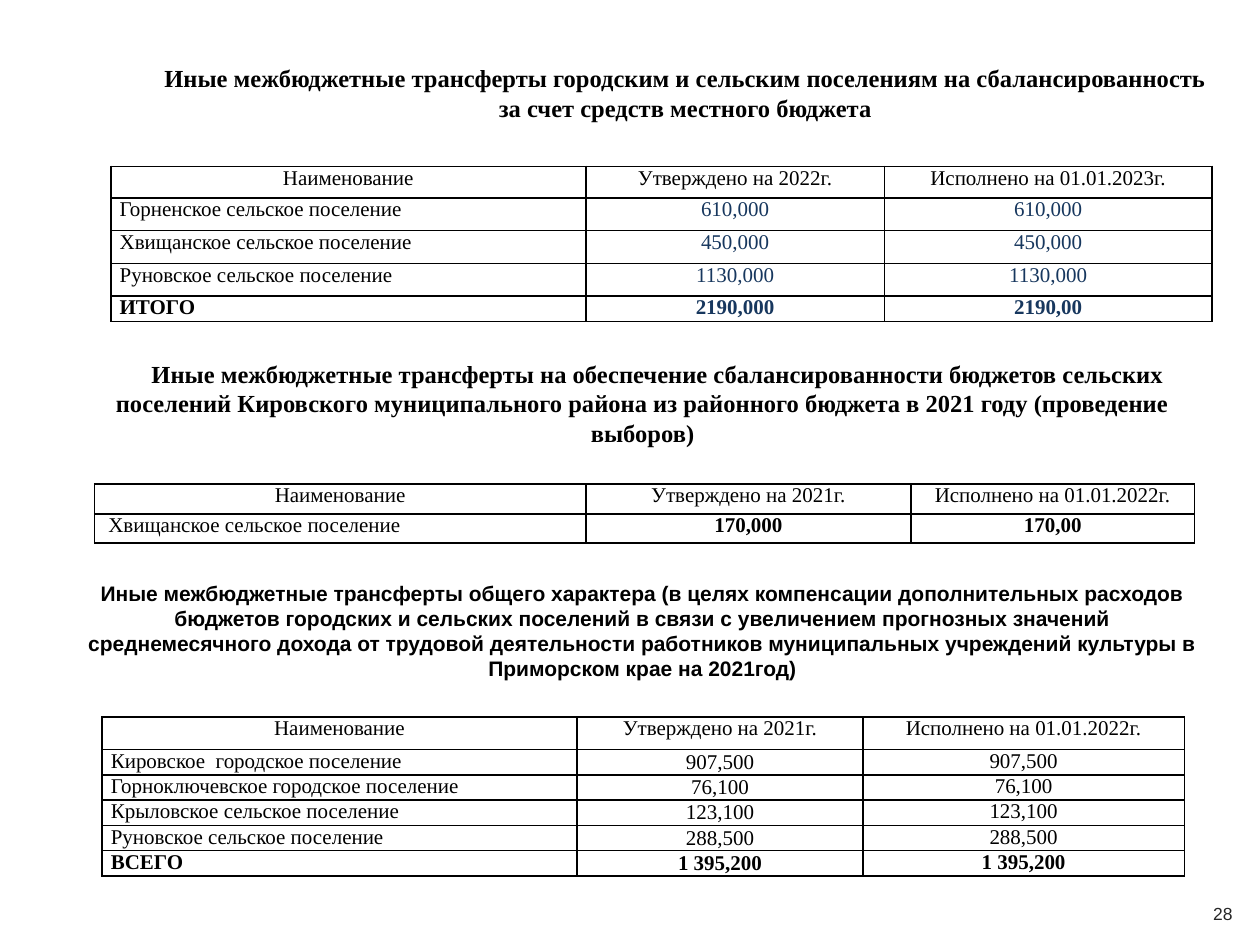
from collections import namedtuple
from lxml.etree import SubElement
from pptx import Presentation
from pptx.dml.color import RGBColor as Rgb
from pptx.enum.text import MSO_ANCHOR as Anchor, MSO_AUTO_SIZE as AutoSize, PP_ALIGN as Align
from pptx.oxml import parse_xml
from pptx.oxml.ns import nsdecls
from pptx.util import Inches, Pt

Theme = namedtuple("Theme", "serif sans black navy gray heading body number border")
theme = Theme("Times New Roman", "Arial", "000000", "17375E", "262626", 14, 12, 10, 1)

deck = Presentation()
deck.slide_width, deck.slide_height = Inches(10), Inches(7.5)
COL, ROW = deck.slide_width / 100, deck.slide_height / 75
slide = deck.slides.add_slide(deck.slide_layouts[5])


def grid(left, top, width, height):
    return round(left * COL), round(top * ROW), round(width * COL), round(height * ROW)


def write(frame, text, size, font=theme.serif, color=theme.black, bold=False, align=Align.CENTER):
    paragraph = frame.paragraphs[0]
    paragraph.alignment = align
    run = paragraph.add_run()
    run.text = text
    run.font.name, run.font.size, run.font.bold = font, Pt(size), bold
    run.font.color.rgb = Rgb.from_string(color)
    return paragraph


heading = slide.shapes.title
heading.left, heading.top, heading.width, heading.height = grid(11.3, 3.7, 86.2, 7.3)
heading.text_frame.auto_size = AutoSize.NONE
heading.text_frame.vertical_anchor = Anchor.MIDDLE
write(heading.text_frame, "Иные межбюджетные трансферты городским и сельским поселениям "
      "на сбалансированность за счет средств местного бюджета", theme.heading, bold=True)

captions = [
    (grid(4.5, 28, 93, 8.1), Anchor.TOP, 2.4,
     "Иные межбюджетные трансферты на обеспечение сбалансированности бюджетов сельских "
     "поселений Кировского муниципального района из районного бюджета в 2021 году "
     "(проведение выборов)", theme.heading, theme.serif, theme.black, True),
    (grid(5.8, 45.5, 90.4, 9.1), Anchor.MIDDLE, 0,
     "Иные межбюджетные трансферты общего характера (в целях компенсации дополнительных "
     "расходов бюджетов городских и сельских поселений в связи с увеличением прогнозных "
     "значений среднемесячного дохода от трудовой деятельности работников муниципальных "
     "учреждений культуры в Приморском крае на 2021год)",
     theme.body, theme.sans, theme.black, True),
    (grid(94.5, 70.5, 5.1, 4), Anchor.MIDDLE, 0, "28",
     theme.number, theme.sans, theme.gray, False),
]
for place, anchor, indent, text, size, font, color, bold in captions:
    frame = slide.shapes.add_textbox(*place).text_frame
    frame.word_wrap = True
    frame.vertical_anchor = anchor
    paragraph = write(frame, text, size, font, color, bold)
    if indent:
        paragraph._p.get_or_add_pPr().set("indent", str(round(indent * COL)))

Budget = namedtuple("Budget", "left top columns rows years entries ink bold_from middle inset")
budgets = [
    Budget(8.8, 13.2, [37.7, 23.7, 26], [2.5, 2.6, 2.6, 2.6, 2], ("2022г.", "01.01.2023г."), [
        ("Горненское сельское поселение", "610,000", "610,000"),
        ("Хвищанское сельское поселение", "450,000", "450,000"),
        ("Руновское сельское поселение", "1130,000", "1130,000"),
        ("ИТОГО", "2190,000", "2190,00"),
    ], theme.navy, 0, False, 0.7),
    Budget(7.5, 38.4, [39, 25.8, 22.5], [2.4, 2.3], ("2021г.", "01.01.2022г."), [
        ("Хвищанское сельское поселение", "170,000", "170,00"),
    ], theme.black, 1, False, 1.1),
    Budget(8.1, 56.9, [37.7, 22.7, 25.5], [2.6] + [2] * 5, ("2021г.", "01.01.2022г."), [
        ("Кировское  городское поселение", "907,500", "907,500"),
        ("Горноключевское городское поселение", "76,100", "76,100"),
        ("Крыловское сельское поселение", "123,100", "123,100"),
        ("Руновское сельское поселение", "288,500", "288,500"),
        ("ВСЕГО", "1 395,200", "1 395,200"),
    ], theme.black, 0, True, 0.7),
]
for budget in budgets:
    approved, executed = budget.years
    header = ("Наименование", f"Утверждено на {approved}", f"Исполнено на {executed}")
    lines = [header, *budget.entries]
    place = grid(budget.left, budget.top, sum(budget.columns), sum(budget.rows))
    table = slide.shapes.add_table(len(lines), len(header), *place).table
    table.first_row = table.horz_banding = False
    for column, width in zip(table.columns, budget.columns):
        column.width = round(width * COL)
    for r, line in enumerate(lines):
        table.rows[r].height = round(budget.rows[r] * ROW)
        for c, text in enumerate(line):
            cell = table.cell(r, c)
            label = r > 0 and c == 0
            cell.margin_left = round((budget.inset if label else 0.7) * COL)
            cell.margin_right = round(0.7 * COL)
            cell.margin_top = cell.margin_bottom = 0
            if budget.middle and r > 0 and c == 1:
                cell.vertical_anchor = Anchor.MIDDLE
            write(cell.text_frame, text, theme.body,
                  color=budget.ink if r > 0 and c > 0 else theme.black,
                  bold=r == len(lines) - 1 and c >= budget.bold_from,
                  align=Align.LEFT if label else Align.CENTER)
            cell.fill.background()
            borders = cell._tc.get_or_add_tcPr()
            for position, side in enumerate(("lnL", "lnR", "lnT", "lnB")):
                edge = parse_xml(f'<a:{side} {nsdecls("a")} w="{Pt(theme.border)}">'
                                 f'<a:solidFill><a:srgbClr val="{theme.black}"/></a:solidFill>'
                                 f'</a:{side}>')
                borders.insert(position, edge)

deck.save("out.pptx")
